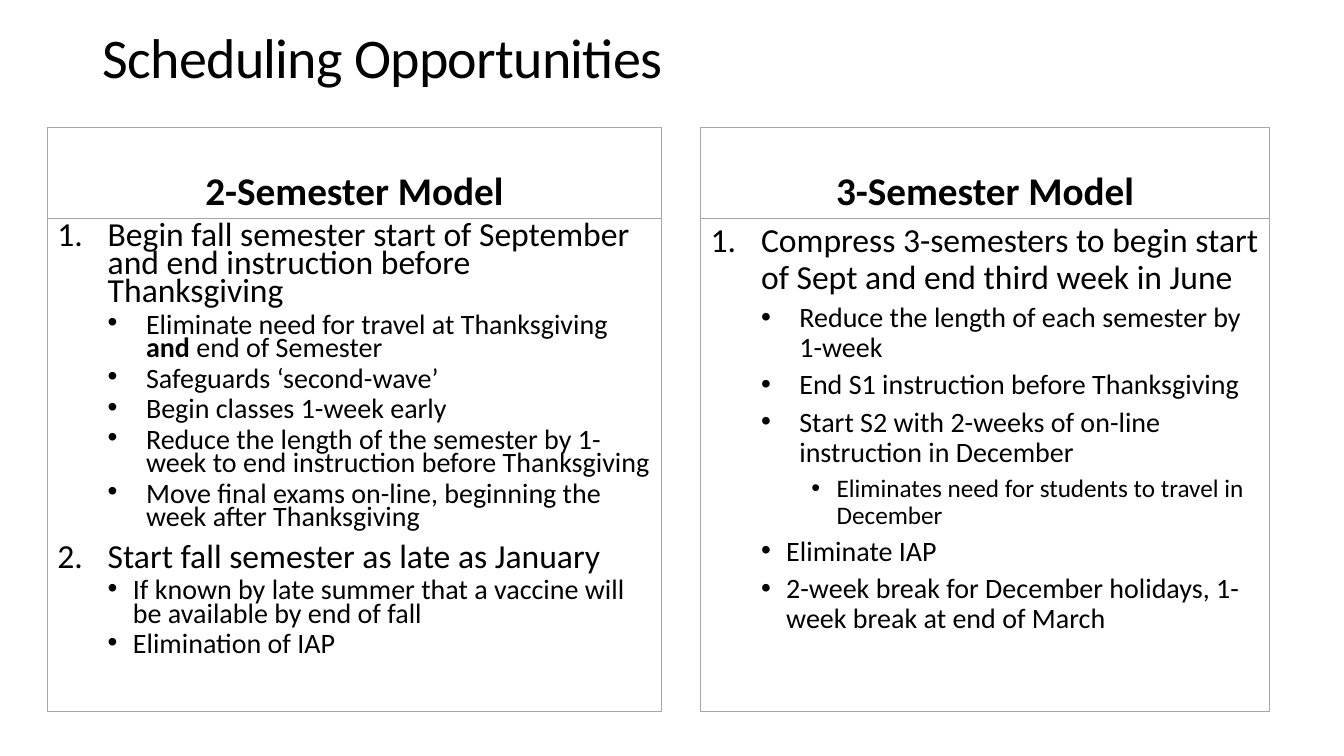
from lxml.etree import SubElement
from pptx import Presentation
from pptx.dml.color import RGBColor
from pptx.enum.shapes import MSO_SHAPE
from pptx.enum.text import MSO_ANCHOR, PP_ALIGN
from pptx.oxml.ns import qn
from pptx.util import Inches, Pt

FONT = "Calibri"
TEXT_COLOR = "000000"
BORDER_COLOR = "A6A6A6"
TITLE = "Scheduling Opportunities"

# Each style: outline level, left margin, hanging indent, size, space before
STYLES = {
    "number": (0, 0.5, 0.5, 24, 10),
    "wide": (1, 0.88, 0.38, 20, 5),
    "narrow": (1, 0.75, 0.25, 20, 5),
    "detail": (2, 1.25, 0.25, 18, 5),
}

# Each item: style, then its runs; every second run is bold
MODELS = [
    {
        "heading": "2-Semester Model", "left": 0.47, "width": 6.09, "line_spacing": 0.7,
        "items": [
            ("number", "Begin fall semester start of September and end instruction before Thanksgiving"),
            ("wide", "Eliminate need for travel at Thanksgiving ", "and ", "end of Semester"),
            ("wide", "Safeguards ‘second-wave’"),
            ("wide", "Begin classes 1-week early"),
            ("wide", "Reduce the length of the semester by 1-week to end instruction before Thanksgiving"),
            ("wide", "Move final exams on-line, beginning the week after Thanksgiving"),
            ("number", "Start fall semester as late as January"),
            ("narrow", "If known by late summer that a vaccine will be available by end of fall"),
            ("narrow", "Elimination of IAP"),
        ],
    },
    {
        "heading": "3-Semester Model", "left": 6.95, "width": 5.64, "line_spacing": 0.9,
        "items": [
            ("number", "Compress 3-semesters to begin start of Sept and end third week in June"),
            ("wide", "Reduce the length of each semester by 1-week"),
            ("wide", "End S1 instruction before Thanksgiving"),
            ("wide", "Start S2 with 2-weeks of on-line instruction in December"),
            ("detail", "Eliminates need for students to travel in December"),
            ("narrow", "Eliminate IAP"),
            ("narrow", "2-week break for December holidays, 1-week break at end of March"),
        ],
    },
]

HEADING_TOP, HEADING_HEIGHT, BODY_HEIGHT = 1.27, 0.9, 4.89


def color(hex_string):
    return RGBColor.from_string(hex_string)


def add_run(paragraph, text, size, bold=False):
    run = paragraph.add_run()
    run.text = text
    run.font.name = FONT
    run.font.size = Pt(size)
    run.font.bold = bold
    run.font.color.rgb = color(TEXT_COLOR)
    return run


def add_box(slide, left, top, width, height, anchor):
    """Add an unfilled, thinly outlined rectangle and return its text frame."""
    shape = slide.shapes.add_shape(
        MSO_SHAPE.RECTANGLE, Inches(left), Inches(top), Inches(width), Inches(height))
    shape.shadow.inherit = False
    shape.fill.background()
    shape.line.color.rgb = color(BORDER_COLOR)
    shape.line.width = Pt(0.75)
    shape.text_frame.word_wrap = True
    shape.text_frame.vertical_anchor = anchor
    return shape.text_frame


def add_item(paragraph, style, texts, line_spacing):
    level, margin, hanging, size, space_before = STYLES[style]
    paragraph.alignment = PP_ALIGN.LEFT
    paragraph.level = level
    paragraph.line_spacing = line_spacing
    paragraph.space_before = Pt(space_before)
    properties = paragraph._p.get_or_add_pPr()
    properties.set("marL", str(Inches(margin)))
    properties.set("indent", str(-Inches(hanging)))
    if style == "number":
        SubElement(properties, qn("a:buFont"), typeface=FONT)
        SubElement(properties, qn("a:buAutoNum"), type="arabicPeriod")
    else:
        SubElement(properties, qn("a:buFont"), typeface="Arial")
        SubElement(properties, qn("a:buChar"), char="•")
    for index, text in enumerate(texts):
        add_run(paragraph, text, size, bold=index % 2 == 1)


def add_title(slide):
    box = slide.shapes.add_textbox(Inches(0.92), Inches(-0.13), Inches(11.5), Inches(1.45))
    box.text_frame.word_wrap = True
    box.text_frame.vertical_anchor = MSO_ANCHOR.MIDDLE
    paragraph = box.text_frame.paragraphs[0]
    paragraph.line_spacing = 0.9
    run = add_run(paragraph, TITLE, 40)
    run._r.get_or_add_rPr().set("spc", "-50")


def add_model(slide, model):
    left, width = model["left"], model["width"]
    heading = add_box(slide, left, HEADING_TOP, width, HEADING_HEIGHT, MSO_ANCHOR.BOTTOM)
    paragraph = heading.paragraphs[0]
    paragraph.alignment = PP_ALIGN.CENTER
    paragraph.line_spacing = 0.9
    paragraph.space_before = Pt(10)
    add_run(paragraph, model["heading"], 28, bold=True)

    body = add_box(slide, left, HEADING_TOP + HEADING_HEIGHT, width, BODY_HEIGHT, MSO_ANCHOR.TOP)
    for index, (style, *texts) in enumerate(model["items"]):
        paragraph = body.add_paragraph() if index else body.paragraphs[0]
        add_item(paragraph, style, texts, model["line_spacing"])


def main():
    presentation = Presentation()
    presentation.slide_width = Inches(13.33)
    presentation.slide_height = Inches(7.5)
    slide = presentation.slides.add_slide(presentation.slide_layouts[6])
    add_title(slide)
    for model in MODELS:
        add_model(slide, model)
    presentation.save("out.pptx")


if __name__ == "__main__":
    main()
